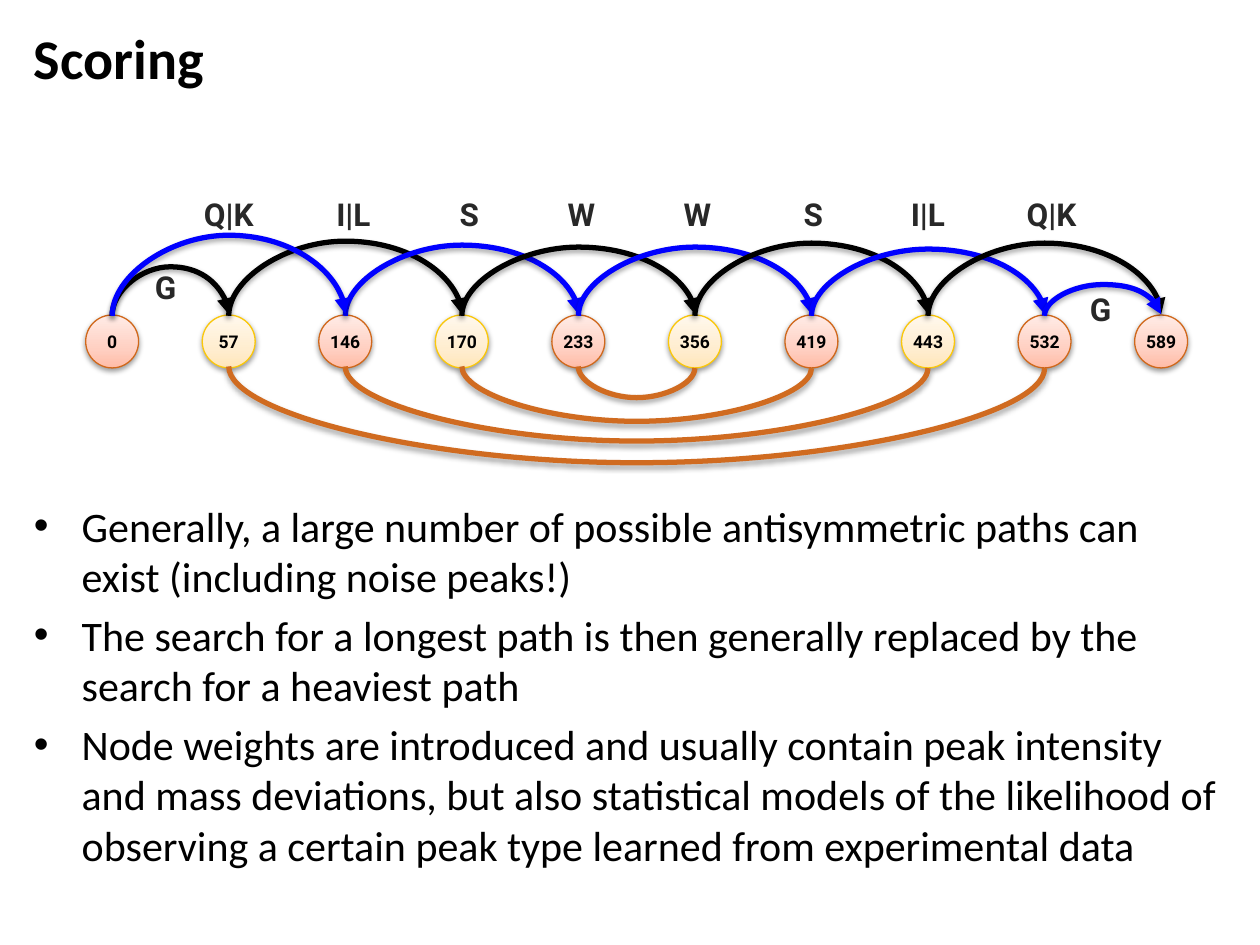
from lxml import etree
from pptx import Presentation
from pptx.dml.color import RGBColor
from pptx.enum.shapes import MSO_CONNECTOR, MSO_SHAPE
from pptx.enum.text import MSO_ANCHOR, MSO_AUTO_SIZE, PP_ALIGN
from pptx.oxml import parse_xml
from pptx.oxml.ns import nsdecls, qn
from pptx.util import Inches, Pt

CURVE, OVAL = MSO_CONNECTOR.CURVE, MSO_SHAPE.OVAL
TOP, MIDDLE = MSO_ANCHOR.TOP, MSO_ANCHOR.MIDDLE
LEFT, CENTER = PP_ALIGN.LEFT, PP_ALIGN.CENTER
GROW = MSO_AUTO_SIZE.SHAPE_TO_FIT_TEXT

COLOR = {
    "black": "000000", "blue": "0000FF", "brown": "D06B20", "gray": "282828",
    "rust": "D0681B", "gold": "FAC70A",
}
FADE = {
    "rust": ("FFBCA7", "FFCFC1", "FFECE7"),
    "gold": ("FFE6BA", "FFEDCF", "FFF8ED"),
}
STOPS = (0, 35, 100)
COLS, ROWS = 100, 75
START, PITCH, NODE = 8.9, 9.25, 4.2
NODE_TOP, NODE_LOW = 25, 29.15

MASSES = (0, 57, 146, 170, 233, 356, 419, 443, 532, 589)
GOLDEN = {57, 170, 356, 443}
ARCS = (
    (0, 1, 28.23, "black"), (1, 3, 43, "black"), (2, 4, 40.72, "blue"),
    (3, 5, 39.59, "black"), (0, 2, 46.41, "blue"), (4, 6, 39.59, "blue"),
    (5, 7, 41.86, "black"), (6, 8, 38.45, "blue"), (7, 9, 41.86, "black"),
    (8, 9, 18, "blue"),
)
LINKS = ((1, 8, 55.5), (2, 7, 43), (3, 6, 31.64), (4, 5, 18))
LABELS = (
    ("G", 13.15, 20.8), ("Q|K", 18.15, 15), ("I|L", 28.05, 15),
    ("S", 37.15, 15), ("W", 46.15, 15), ("W", 55.35, 15),
    ("S", 64.45, 15), ("I|L", 73.65, 15), ("Q|K", 83.45, 15),
    ("G", 87.35, 22.5),
)
WIDTHS = {"G": 3.7, "Q|K": 6.9, "I|L": 5.7, "S": 3.3, "W": 4.3}
POINTS = (
    "Generally, a large number of possible antisymmetric paths can exist "
    "(including noise peaks!)",
    "The search for a longest path is then generally replaced by the search "
    "for a heaviest path",
    "Node weights are introduced and usually contain peak intensity and mass "
    "deviations, but also statistical models of the likelihood of observing a "
    "certain peak type learned from experimental data",
)


def write(frame, *texts, size, font="Roboto", color="black", bold=False,
          align=LEFT, anchor=TOP, wrap=True, bullet=False):
    frame.word_wrap = wrap
    frame.vertical_anchor = anchor
    for i, text in enumerate(texts):
        para = frame.add_paragraph() if i else frame.paragraphs[0]
        para.alignment = align
        run = para.add_run()
        run.text = text
        run.font.size, run.font.name, run.font.bold = Pt(size), font, bold
        run.font.color.rgb = RGBColor.from_string(COLOR[color])
        if bullet:
            para.space_before = Pt(4.8)
            props = para._p.get_or_add_pPr()
            props.set("marL", str(Inches(0.38)))
            props.set("indent", str(-Inches(0.38)))
            etree.SubElement(props, qn("a:buFont")).set("typeface", "Arial")
            etree.SubElement(props, qn("a:buChar")).set("char", "•")


class Board:
    def __init__(self, deck):
        self.deck = deck
        self.slide = deck.slides.add_slide(deck.slide_layouts[6])
        self.shapes = self.slide.shapes

    def x(self, cols):
        return round(self.deck.slide_width * cols / COLS)

    def y(self, rows):
        return round(self.deck.slide_height * rows / ROWS)

    def box(self, x, y, w, h):
        return self.x(x), self.y(y), self.x(w), self.y(h)

    def text(self, area, *texts, **style):
        frame = self.shapes.add_textbox(*self.box(*area)).text_frame
        write(frame, *texts, **style)
        return frame

    def label(self, text, mid, top):
        width = WIDTHS[text]
        frame = self.text((mid - width / 2, top, width, 4), text, size=18,
                          color="gray", bold=True, align=CENTER, wrap=False)
        frame.auto_size = GROW

    def shade(self, shape, alpha, dist):
        shape._element.spPr.append(parse_xml(
            f'<a:effectLst {nsdecls("a")}><a:outerShdw blurRad="{Pt(3.1)}" '
            f'dist="{Pt(dist)}" dir="5400000" rotWithShape="0">'
            f'<a:srgbClr val="000000"><a:alpha val="{alpha * 1000}"/>'
            '</a:srgbClr></a:outerShdw></a:effectLst>'))

    def node(self, spot, mass):
        tone = "gold" if mass in GOLDEN else "rust"
        left = START + PITCH * spot - NODE / 2
        oval = self.shapes.add_shape(
            OVAL, *self.box(left, NODE_TOP, NODE, NODE))
        oval.fill.gradient()
        oval.fill.gradient_angle = 90
        stops = oval._element.spPr.find(".//" + qn("a:gsLst"))
        for stop in list(stops):
            stops.remove(stop)
        for share, shade in zip(STOPS, FADE[tone]):
            stop = etree.SubElement(stops, qn("a:gs"), pos=str(share * 1000))
            etree.SubElement(stop, qn("a:srgbClr"), val=shade)
        oval.line.color.rgb = RGBColor.from_string(COLOR[tone])
        oval.line.width = Pt(0.75)
        self.shade(oval, 38, 1.6)
        frame = oval.text_frame
        frame.margin_left = frame.margin_right = 0
        frame.margin_top = frame.margin_bottom = 0
        write(frame, str(mass), size=10, bold=True, align=CENTER,
              anchor=MIDDLE)

    def arc(self, first, last, rise, color, above=True):
        span, thin = self.x(PITCH * (last - first)), Pt(1)
        mid = self.x(START + PITCH * (first + last) / 2)
        base = self.y(NODE_TOP if above else NODE_LOW)
        line = self.shapes.add_connector(CURVE, 0, 0, thin, span)
        line.left, line.top = mid - thin // 2, base - span // 2
        turn = line._element.spPr.find(qn("a:xfrm"))
        turn.set("rot", str((90 if above else 270) * 60000))
        turn.set("flipH", "1")
        if above:
            turn.set("flipV", "1")
        guides = line._element.spPr.find(".//" + qn("a:avLst"))
        etree.SubElement(guides, qn("a:gd"), name="adj1",
                         fmla=f"val {round(rise * 100000)}")
        line.line.color.rgb = RGBColor.from_string(COLOR[color])
        line.line.width = Pt(3)
        if above:
            edge = line.line._get_or_add_ln()
            etree.SubElement(edge, qn("a:tailEnd"), type="triangle")
        self.shade(line, 35, 1.8)


def main():
    deck = Presentation()
    deck.slide_width, deck.slide_height = Inches(10), Inches(7.5)
    board = Board(deck)
    board.text((1.7, 0.8, 73.3, 7.5), "Scoring", size=32, font="Calibri",
               bold=True, anchor=MIDDLE)
    board.text((1.7, 39.2, 96.6, 30.8), *POINTS, size=24, font="Calibri",
               bullet=True)
    for spot, mass in enumerate(MASSES):
        board.node(spot, mass)
    for arc in ARCS:
        board.arc(*arc)
    for link in LINKS:
        board.arc(*link, "brown", above=False)
    for label in LABELS:
        board.label(*label)
    deck.save("out.pptx")


if __name__ == "__main__":
    main()
